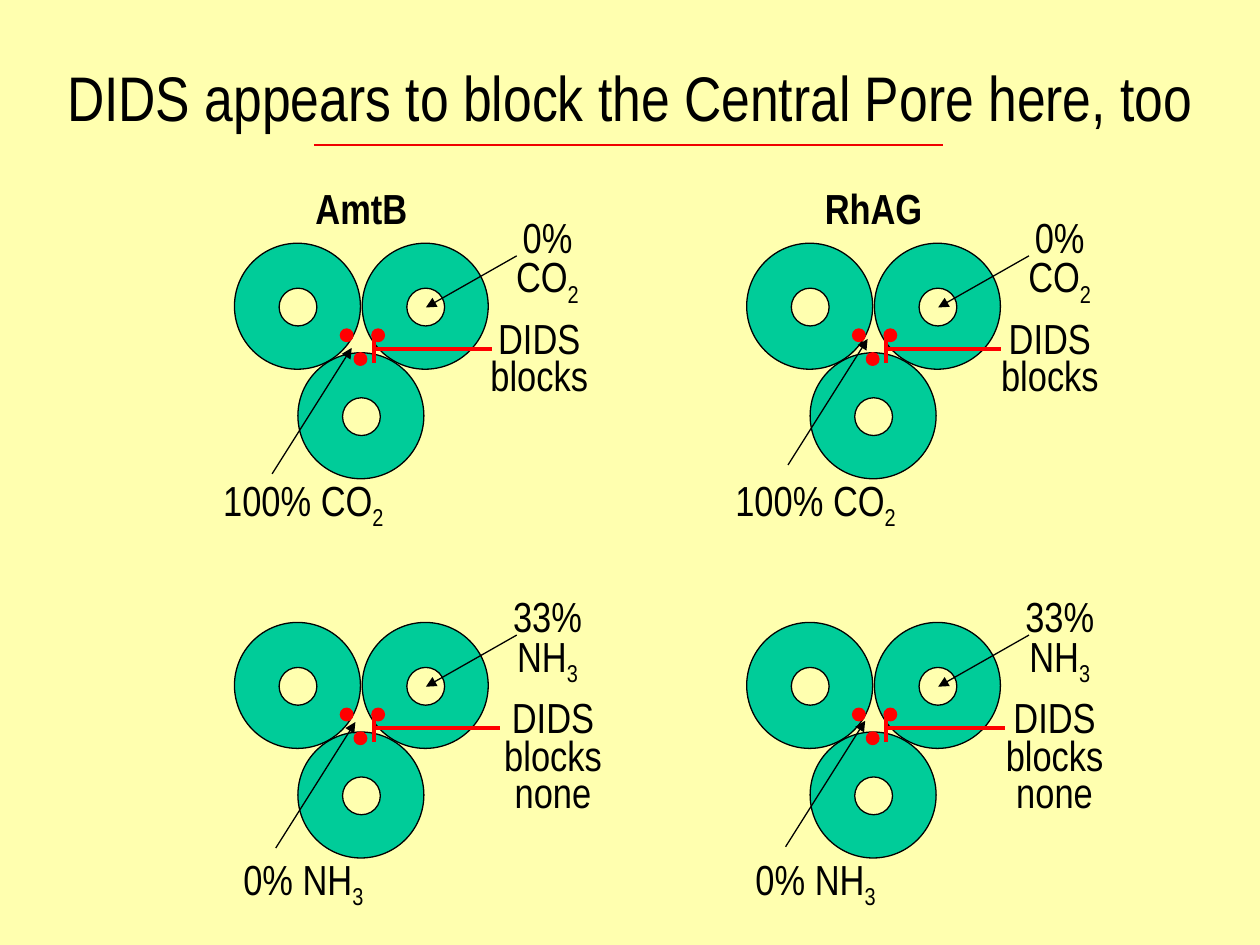
from lxml.etree import SubElement
from pptx import Presentation
from pptx.dml.color import RGBColor
from pptx.enum.shapes import MSO_CONNECTOR, MSO_SHAPE
from pptx.enum.text import MSO_ANCHOR, PP_ALIGN
from pptx.oxml.ns import qn
from pptx.util import Pt

COLORS = {
    "background": "FFFFAF",
    "text": "000000",
    "outline": "000000",
    "monomer": "00CC99",
    "rule": "F00000",
    "dids": "FF0000",
}
FONT = "Arial Narrow"
MONOMER, PORE, DOT = 72, 21.6, 7.2  # diameters

# Offsets within a panel, from the corner of its upper left monomer
MONOMER_OFFSETS = [(0, 0), (73, 0), (36.25, 62.6)]
DOT_OFFSETS = [(68.4, 62.6), (78.5, 49), (60.5, 49)]

COLUMNS = {"AmtB": 134, "RhAG": 426.7}
ROWS = {"CO2": 139, "NH3": 355.7}

# column, row, monomer share, central share, block label,
# label left and width, end of the block line, tip of the central arrow
PANELS = [
    ("AmtB", "CO2", "0%", "100%", "DIDS blocks", 136, 76.3, 147, (67, 59.8)),
    ("RhAG", "CO2", "0%", "100%", "DIDS blocks", 135.4, 75.6, 145.5, (69.1, 54.7)),
    ("RhAG", "NH3", "33%", "0%", "DIDS blocks none", 137, 77.8, 147.6, (67.7, 56.2)),
    ("AmtB", "NH3", "33%", "0%", "DIDS blocks none", 141, 82, 152, (69.1, 56.9)),
]


def rgb(name):
    return RGBColor.from_string(COLORS[name])


def style(paragraph, size=24, bold=False, spacing=None):
    paragraph.alignment = PP_ALIGN.CENTER
    if spacing:
        paragraph.line_spacing = spacing
    font = paragraph.font
    font.name, font.size, font.bold = FONT, Pt(size), bold
    font.color.rgb = rgb("text")


def add_label(slide, left, top, width, height):
    frame = slide.shapes.add_textbox(Pt(left), Pt(top), Pt(width), Pt(height)).text_frame
    frame.word_wrap = True
    return frame.paragraphs[0]


def add_gas(paragraph, gas):
    """Write a formula with its last figure lowered."""
    paragraph.add_run().text = gas[:-1]
    figure = paragraph.add_run()
    figure.text = gas[-1]
    figure.font._element.set("baseline", "-25000")


def add_circle(slide, left, top, diameter, fill, line="outline"):
    shape = slide.shapes.add_shape(
        MSO_SHAPE.OVAL, Pt(left), Pt(top), Pt(diameter), Pt(diameter))
    shape.shadow.inherit = False
    shape.fill.solid()
    shape.fill.fore_color.rgb = rgb(fill)
    shape.line.color.rgb = rgb(line)
    shape.line.width = Pt(0.75)


def add_line(slide, start, end, color="outline", width=0.75, arrow=False):
    line = slide.shapes.add_connector(
        MSO_CONNECTOR.STRAIGHT, *(Pt(value) for value in (*start, *end)))
    line.line.color.rgb = rgb(color)
    line.line.width = Pt(width)
    if arrow:
        SubElement(line.line._get_or_add_ln(), qn("a:tailEnd"), type="triangle")
    SubElement(line._element.spPr, qn("a:effectLst"))


def add_title(slide, left, top, width, height):
    title = slide.shapes.title
    title.left, title.top, title.width, title.height = (
        Pt(left), Pt(top), Pt(width), Pt(height))
    frame = title.text_frame
    frame.text = "DIDS appears to block the Central Pore here, too"
    frame.vertical_anchor = MSO_ANCHOR.MIDDLE
    style(frame.paragraphs[0], size=36)
    # Red rule under the title
    middle, half, y = left + width / 2 - 1, 179.6, top + 72.7
    add_line(slide, (middle - half, y), (middle + half, y), "rule", 1.5)


def add_heading(slide, name, left, top):
    paragraph = add_label(slide, left, top, 82, 36)
    paragraph.text = name
    style(paragraph, bold=True)


def add_panel(slide, left, top, gas, monomer_share, central_share,
              block, block_left, block_width, block_end, tip):
    def at(x, y):
        return left + x, top + y

    # Three monomers, each with its own pore
    for offset in MONOMER_OFFSETS:
        add_circle(slide, *at(*offset), MONOMER, "monomer")
    for x, y in MONOMER_OFFSETS:
        add_circle(slide, *at(x + 25.5, y + 25.7), PORE, "background")

    # Flow through a monomer pore
    paragraph = add_label(slide, *at(136, -13.7), 85.7, 47.5)
    paragraph.add_run().text = monomer_share
    paragraph.add_line_break()
    add_gas(paragraph, gas)
    style(paragraph, spacing=0.7)
    add_line(slide, at(161.3, 7.2), at(109.4, 36.7), arrow=True)

    # Flow through the central pore
    paragraph = add_label(slide, *at(-24, 134), 126.7, 27.4)
    paragraph.add_run().text = central_share + " "
    add_gas(paragraph, gas)
    style(paragraph, spacing=0.7)

    # DIDS block
    add_line(slide, at(79.6, 54), at(79.6, 68.4), "dids", 2.25)
    add_line(slide, at(79.6, 60.5), at(block_end, 60.5), "dids", 2.25)
    paragraph = add_label(slide, *at(block_left, 42.5), block_width, 24 * len(block.split()))
    paragraph.text = block
    style(paragraph, spacing=0.75)
    for offset in DOT_OFFSETS:
        add_circle(slide, *at(*offset), DOT, "dids", "dids")
    add_line(slide, at(tip[0] - 45.5, tip[1] + 72), at(*tip), arrow=True)


def main():
    presentation = Presentation()
    presentation.slide_width, presentation.slide_height = Pt(720), Pt(540)
    slide = presentation.slides.add_slide(presentation.slide_layouts[5])
    slide.background.fill.solid()
    slide.background.fill.fore_color.rgb = rgb("background")

    add_title(slide, 0, 10.1, 720, 90)
    for name, left in COLUMNS.items():
        add_heading(slide, name, left + 31.5, 100.8)
    for column, gas, *details in PANELS:
        add_panel(slide, COLUMNS[column], ROWS[gas], gas, *details)
    presentation.save("out.pptx")


if __name__ == "__main__":
    main()
